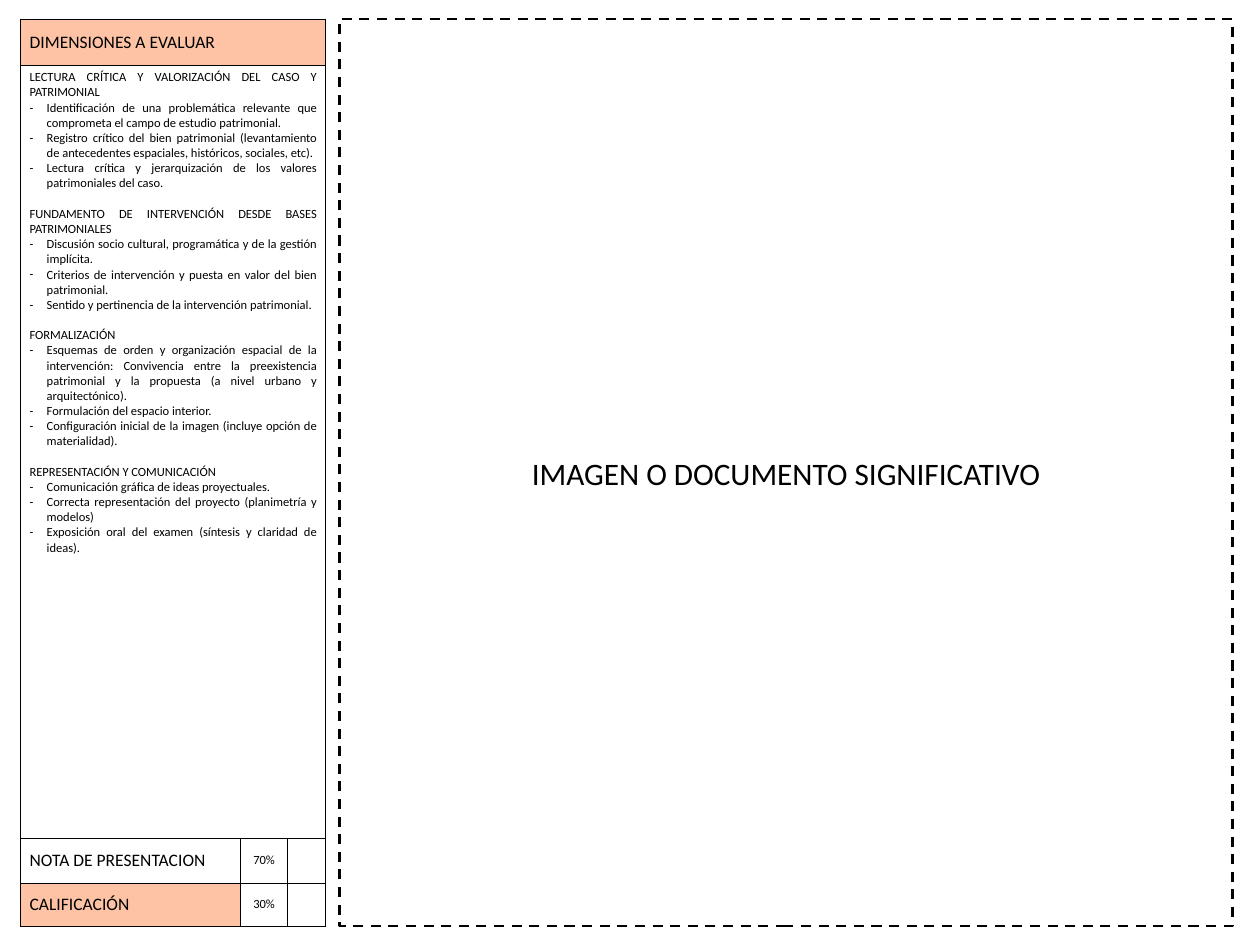
from lxml import etree
from pptx import Presentation
from pptx.dml.color import RGBColor
from pptx.enum.dml import MSO_LINE
from pptx.enum.shapes import MSO_SHAPE
from pptx.enum.text import MSO_ANCHOR, PP_ALIGN
from pptx.oxml.ns import qn
from pptx.util import Pt

LEFT, CENTER, JUSTIFY = PP_ALIGN.LEFT, PP_ALIGN.CENTER, PP_ALIGN.JUSTIFY
TOP, MIDDLE = MSO_ANCHOR.TOP, MSO_ANCHOR.MIDDLE
RECTANGLE, DASH = MSO_SHAPE.RECTANGLE, MSO_LINE.DASH

FONT = "Calibri"
BLACK, WHITE, PEACH = "000000", "FFFFFF", "FDC3A4"
THIN, THICK = 0.5, 1
BULLET_INDENT = 13.7
SECTION_GAP = 12.2

COLUMN_WIDTHS = [175.7, 38.2, 30.2]
ROW_HEIGHTS = [37.2, 618.5, 35.4, 34.6]

CRITERIA = [
    ("LECTURA CRÍTICA Y VALORIZACIÓN DEL CASO Y PATRIMONIAL", [
        "Identificación de una problemática relevante que comprometa el campo de estudio patrimonial.",
        "Registro crítico del bien patrimonial (levantamiento de antecedentes espaciales, "
        "históricos, sociales, etc).",
        "Lectura crítica y jerarquización de los valores patrimoniales del caso.",
    ]),
    ("FUNDAMENTO DE INTERVENCIÓN DESDE BASES PATRIMONIALES", [
        "Discusión socio cultural, programática y de la gestión implícita.",
        "Criterios de intervención y puesta en valor del bien patrimonial.",
        "Sentido y pertinencia de la intervención patrimonial.",
    ]),
    ("FORMALIZACIÓN", [
        "Esquemas de orden y organización espacial de la intervención: Convivencia entre la "
        "preexistencia patrimonial y la propuesta (a nivel urbano y arquitectónico).",
        "Formulación del espacio interior.",
        "Configuración inicial de la imagen (incluye opción de materialidad).",
    ]),
    ("REPRESENTACIÓN Y COMUNICACIÓN", [
        "Comunicación gráfica de ideas proyectuales.",
        "Correcta representación del proyecto (planimetría y modelos)",
        "Exposición oral del examen (síntesis y claridad de ideas).",
    ]),
]

GRADES = [("NOTA DE PRESENTACION", "70%", WHITE), ("CALIFICACIÓN", "30%", PEACH)]


def color(value):
    return RGBColor.from_string(value)


def add_text(frame, text, size=10, align=LEFT, bullet=None, space_before=0):
    """Fill the frame's first paragraph, or append one if it already has text."""
    paragraph = frame.add_paragraph() if frame.text else frame.paragraphs[0]
    paragraph.alignment = align
    if space_before:
        paragraph.space_before = Pt(space_before)
    if bullet:
        properties = paragraph._p.get_or_add_pPr()
        properties.set("marL", str(Pt(BULLET_INDENT)))
        properties.set("indent", str(Pt(-BULLET_INDENT)))
        etree.SubElement(properties, qn("a:buFont"), typeface=FONT)
        etree.SubElement(properties, qn("a:buChar"), char=bullet)
    run = paragraph.add_run()
    run.text = text
    run.font.name = FONT
    run.font.size = Pt(size)
    run.font.color.rgb = color(BLACK)


def format_cell(cell, left=THICK, right=THICK, top=THICK, bottom=THICK, fill=None, anchor=MIDDLE):
    """Set border widths, then the fill, which must follow the borders in the XML."""
    properties = cell._tc.get_or_add_tcPr()
    for side, width in zip("LRTB", (left, right, top, bottom)):
        line = etree.SubElement(properties, qn(f"a:ln{side}"), w=str(Pt(width)))
        solid = etree.SubElement(line, qn("a:solidFill"))
        etree.SubElement(solid, qn("a:srgbClr"), val=BLACK)
    if fill:
        cell.fill.solid()
        cell.fill.fore_color.rgb = color(fill)
    else:
        cell.fill.background()
    cell.vertical_anchor = anchor


def write_criteria(frame):
    for index, (heading, items) in enumerate(CRITERIA):
        add_text(frame, heading, align=JUSTIFY, space_before=SECTION_GAP if index else 0)
        for item in items:
            add_text(frame, item, align=JUSTIFY, bullet="-")


def add_evaluation_table(slide, left, top, width, height):
    table = slide.shapes.add_table(
        len(ROW_HEIGHTS), len(COLUMN_WIDTHS), Pt(left), Pt(top), Pt(width), Pt(height)).table
    table.first_row = table.horz_banding = False
    for column, share in zip(table.columns, COLUMN_WIDTHS):
        column.width = Pt(width * share / sum(COLUMN_WIDTHS))
    for row, share in zip(table.rows, ROW_HEIGHTS):
        row.height = Pt(height * share / sum(ROW_HEIGHTS))

    last_column = len(COLUMN_WIDTHS) - 1
    for row_index in (0, 1):
        table.cell(row_index, 0).merge(table.cell(row_index, last_column))
    for column_index in range(last_column + 1):
        format_cell(table.cell(0, column_index), top=THIN, fill=PEACH)
        format_cell(table.cell(1, column_index), anchor=TOP)
    add_text(table.cell(0, 0).text_frame, "DIMENSIONES A EVALUAR", size=14)
    write_criteria(table.cell(1, 0).text_frame)

    for row_index, (label, weight, fill) in enumerate(GRADES, start=2):
        is_last = row_index == len(ROW_HEIGHTS) - 1
        edges = {"top": THIN if is_last else THICK, "bottom": THICK if is_last else THIN}
        label_cell, weight_cell, grade_cell = (
            table.cell(row_index, column_index) for column_index in range(last_column + 1))
        format_cell(label_cell, right=THIN, fill=fill, **edges)
        format_cell(weight_cell, left=THIN, **edges)
        format_cell(grade_cell, **edges)
        add_text(label_cell.text_frame, label, size=14)
        add_text(weight_cell.text_frame, weight, align=CENTER)


def add_image_area(slide, left, top, width, height):
    area = slide.shapes.add_shape(RECTANGLE, Pt(left), Pt(top), Pt(width), Pt(height))
    area.shadow.inherit = False
    area.fill.background()
    area.line.color.rgb = color(BLACK)
    area.line.width = Pt(2)
    area.line.dash_style = DASH
    area.text_frame.word_wrap = True
    area.text_frame.vertical_anchor = MIDDLE
    add_text(area.text_frame, "IMAGEN O DOCUMENTO SIGNIFICATIVO", size=25, align=CENTER)


def main():
    presentation = Presentation()
    presentation.slide_width = Pt(1008)
    presentation.slide_height = Pt(756)
    slide = presentation.slides.add_slide(presentation.slide_layouts[6])
    top, height = 15.2, 725.7
    add_image_area(slide, 271.5, top, 714.4, height)
    add_evaluation_table(slide, 16.5, top, 244.1, height)
    presentation.save("out.pptx")


if __name__ == "__main__":
    main()
